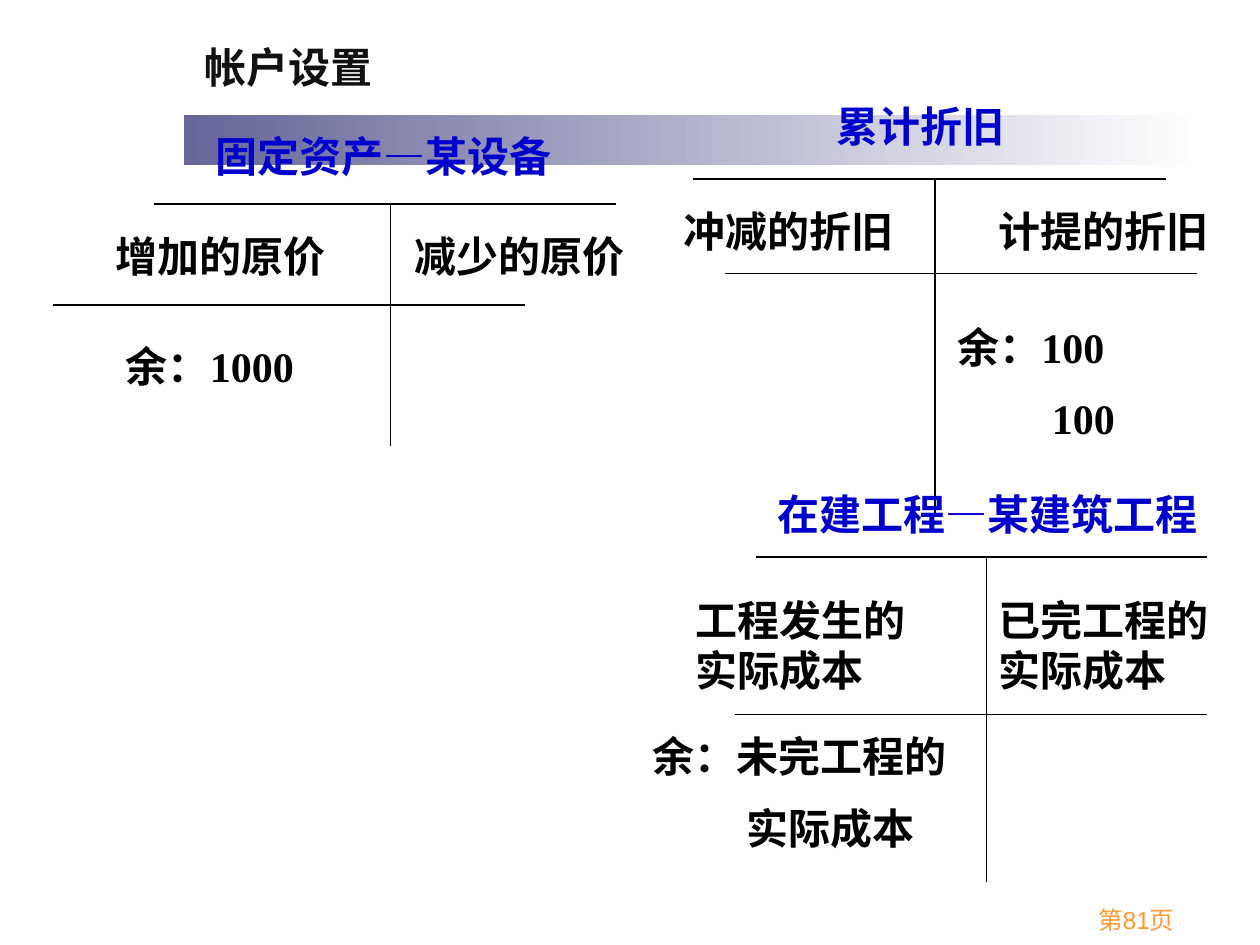
"""Build the account-setup slide with three T-accounts."""
from lxml.etree import SubElement
from pptx import Presentation
from pptx.dml.color import RGBColor
from pptx.enum.shapes import MSO_CONNECTOR, MSO_SHAPE
from pptx.enum.text import MSO_ANCHOR, PP_ALIGN
from pptx.oxml.ns import qn
from pptx.util import Inches, Pt

COLORS = {"black": "000000", "heading": "0000CC", "title": "13110F",
          "page": "FF9933", "band": "666699", "white": "FFFFFF"}
SERIF, SANS = "Times New Roman", "Arial"
LINE_HEIGHT, CONTINUATION_INDENT = 0.5, 0.75

TITLE = ("帐户设置", 1.52, 0.28, 3.56)
PAGE_NUMBER = ("第81页", 6.25, 7.13, 3.17)
BAND = (1.46, 0.91, 8.08, 0.4)

ACCOUNTS = [
    {"heading": ("固定资产—某设备", 1.61, 0.99, 3.27),
     "top": (1.22, 4.89, 1.62), "stem": (3.1, 3.54), "rule": (0.42, 4.17, 2.42),
     "entries": [(["增加的原价"], 0.82, 1.78, 1.94),
                 (["减少的原价"], 3.19, 1.78, 2.2),
                 (["余：1000"], 0.9, 2.65, 2.05)]},
    {"heading": ("累计折旧", 6.54, 0.75, 2.12),
     "top": (5.5, 9.25, 1.42), "stem": (7.42, 4.08), "rule": (5.75, 9.5, 2.17),
     "entries": [(["冲减的折旧"], 5.33, 1.58, 2.17),
                 (["计提的折旧"], 7.83, 1.58, 2.17),
                 (["余：100", "100"], 7.5, 2.5, 2.5)]},
    {"heading": ("在建工程—某建筑工程", 6.07, 3.83, 3.93),
     "top": (6, 9.58, 4.42), "stem": (7.83, 7), "rule": (5.83, 9.58, 5.67),
     "entries": [(["工程发生的实际成本"], 5.42, 4.67, 2.17),
                 (["已完工程的实际成本"], 7.83, 4.67, 2.17),
                 (["余：未完工程的", "实际成本"], 5.08, 5.75, 2.83)]},
]


def rgb(name):
    return RGBColor.from_string(COLORS[name])


def write(label, lines, color, font=SERIF, size=24, bold=True, align=PP_ALIGN.LEFT):
    frame = label.text_frame
    frame.word_wrap = True
    frame.vertical_anchor = MSO_ANCHOR.TOP
    for index, line in enumerate(lines):
        paragraph = frame.add_paragraph() if index else frame.paragraphs[0]
        paragraph.alignment = align
        if index:
            paragraph.space_before = Pt(size / 2)
            paragraph._p.get_or_add_pPr().set("marL", str(Inches(CONTINUATION_INDENT)))
        run = paragraph.add_run()
        run.text = line
        run.font.name, run.font.size, run.font.bold = font, Pt(size), bold
        run.font.color.rgb = rgb(color)


def add_label(slide, lines, left, top, width, color, **style):
    label = slide.shapes.add_textbox(
        *map(Inches, (left, top, width, LINE_HEIGHT * len(lines))))
    write(label, lines, color, **style)


def add_line(slide, *ends):
    line = slide.shapes.add_connector(MSO_CONNECTOR.STRAIGHT, *map(Inches, ends))
    line.line.color.rgb = rgb("black")
    line.line.width = Pt(0.75)
    SubElement(line._element.spPr, qn("a:effectLst"))


def add_band(slide):
    band = slide.shapes.add_shape(MSO_SHAPE.RECTANGLE, *map(Inches, BAND))
    band.shadow.inherit = False
    band.line.fill.background()
    band.fill.gradient()
    band.fill.gradient_angle = 0
    for stop, color, position in zip(band.fill.gradient_stops, ("band", "white"), (0, 1)):
        stop.color.rgb = rgb(color)
        stop.position = position


def add_account(slide, account):
    left, right, top = account["top"]
    stem, bottom = account["stem"]
    rule_left, rule_right, rule = account["rule"]
    add_line(slide, left, top, right, top)
    add_line(slide, stem, top, stem, bottom)
    add_line(slide, rule_left, rule, rule_right, rule)
    heading, *place = account["heading"]
    add_label(slide, [heading], *place, "heading")
    for lines, *place in account["entries"]:
        add_label(slide, lines, *place, "black")


def main():
    deck = Presentation()
    deck.slide_width, deck.slide_height = Inches(10), Inches(7.5)
    slide = deck.slides.add_slide(deck.slide_layouts[5])
    add_band(slide)

    text, left, top, width = TITLE
    title = slide.shapes.title
    title.left, title.top, title.width, title.height = map(
        Inches, (left, top, width, LINE_HEIGHT))
    write(title, [text], "title")

    for account in ACCOUNTS:
        add_account(slide, account)
    text, *place = PAGE_NUMBER
    add_label(slide, [text], *place, "page", font=SANS, size=14, bold=False,
              align=PP_ALIGN.RIGHT)
    deck.save("out.pptx")


if __name__ == "__main__":
    main()
